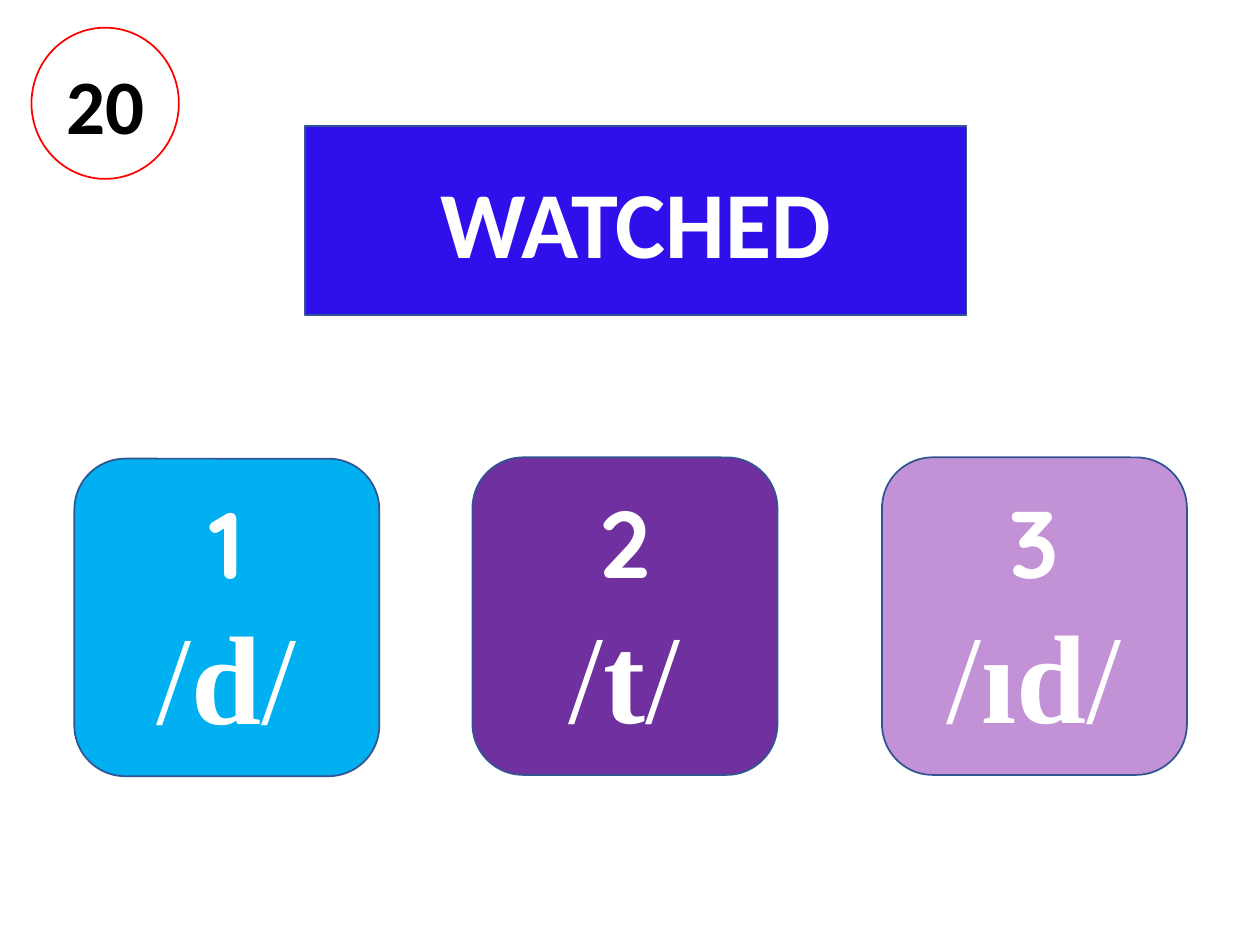
"""Build a quiz slide asking which ending sound a past-tense verb has."""
from typing import NamedTuple

import pptx
import pptx.dml.color
import pptx.enum.shapes
import pptx.enum.text
import pptx.util

Inches = pptx.util.Inches
Kind = pptx.enum.shapes.MSO_SHAPE


class Run(NamedTuple):
    text: str
    font: str
    size: int
    bold: bool = True


class Panel(NamedTuple):
    kind: Kind
    box: tuple[float, float, float, float]
    fill: str
    lines: list[list[Run]]
    border: str = "325491"
    ink: str = "FFFFFF"


class Answer(NamedTuple):
    number: str
    sound: str
    left: float
    top: float
    fill: str


def paint(colour_format, value: str) -> None:
    colour_format.rgb = pptx.dml.color.RGBColor.from_string(value)


def draw_panel(slide, panel: Panel) -> None:
    shape = slide.shapes.add_shape(panel.kind, *map(Inches, panel.box))
    shape.shadow.inherit = False
    shape.fill.solid()
    paint(shape.fill.fore_color, panel.fill)
    paint(shape.line.color, panel.border)
    shape.line.width = pptx.util.Pt(1)
    frame = shape.text_frame
    frame.word_wrap = True
    frame.vertical_anchor = pptx.enum.text.MSO_ANCHOR.MIDDLE
    for index, line in enumerate(panel.lines):
        paragraph = frame.add_paragraph() if index else frame.paragraphs[0]
        paragraph.alignment = pptx.enum.text.PP_ALIGN.CENTER
        for part in line:
            run = paragraph.add_run()
            run.text = part.text
            style = {"name": part.font, "size": pptx.util.Pt(part.size), "bold": part.bold}
            for attribute, value in style.items():
                setattr(run.font, attribute, value)
            paint(run.font.color, panel.ink)


def answer_panel(answer: Answer) -> Panel:
    slash = Run("/", "Times New Roman", 72, False)
    sound = Run(answer.sound, "Times New Roman", 72)
    lines = [[Run(answer.number, "Quicksand", 54)], [slash, sound, slash]]
    return Panel(Kind.ROUNDED_RECTANGLE, (answer.left, answer.top, 2.42, 2.52), answer.fill, lines)


ANSWERS = [
    Answer("3", "ıd", 7, 3.63, "C392D6"),
    Answer("2", "t", 3.75, 3.63, "7030A0"),
    Answer("1", "d", 0.59, 3.64, "00B0F0"),
]
VERB = Panel(Kind.RECTANGLE, (2.42, 1, 5.25, 1.5), "2F10EA", [[Run("WATCHED", "Calibri", 54)]])
QUESTION_NUMBER = Panel(
    Kind.OVAL, (0.25, 0.22, 1.17, 1.2), "FFFFFF", [[Run("20", "Calibri", 44)]], "FF0000", "000000"
)


def main() -> None:
    deck = pptx.Presentation()
    deck.slide_width, deck.slide_height = Inches(10), Inches(7.5)
    slide = deck.slides.add_slide(deck.slide_layouts[6])
    for panel in [*map(answer_panel, ANSWERS), VERB, QUESTION_NUMBER]:
        draw_panel(slide, panel)
    deck.save("out.pptx")


if __name__ == "__main__":
    main()
